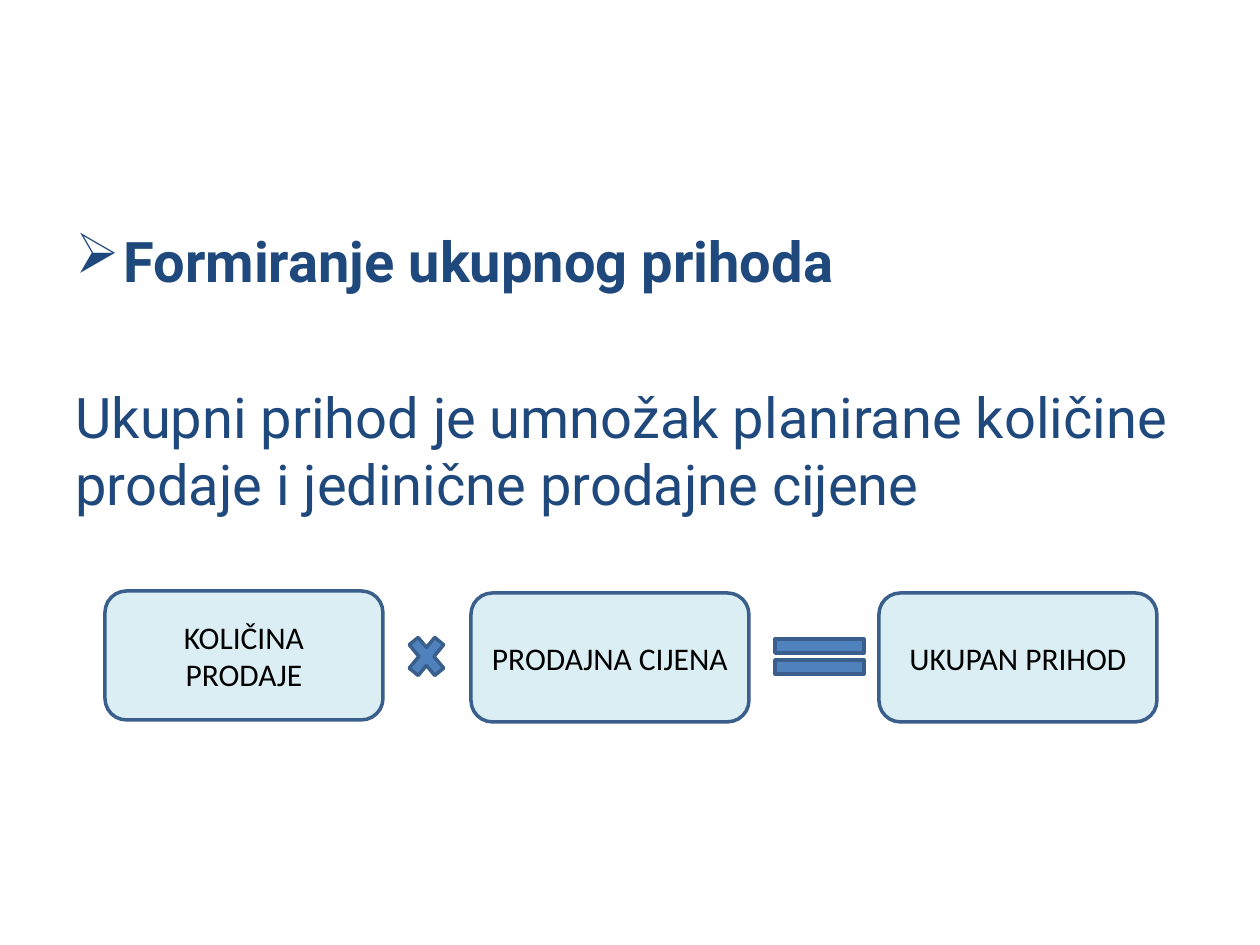
from dataclasses import dataclass

from lxml import etree
from pptx import Presentation
from pptx.dml.color import RGBColor
from pptx.enum import shapes, text
from pptx.oxml.ns import qn
from pptx.util import Pt

PX = 914400 // 126  # EMU per pixel


@dataclass(frozen=True)
class Theme:
    navy: RGBColor = RGBColor(0x1F, 0x49, 0x7D)
    black: RGBColor = RGBColor(0, 0, 0)
    pale: RGBColor = RGBColor(0xDB, 0xEE, 0xF4)
    blue: RGBColor = RGBColor(0x4F, 0x81, 0xBD)
    outline: RGBColor = RGBColor(0x3A, 0x5F, 0x8C)
    body_font: str = "Roboto"
    label_font: str = "Calibri"
    body_size: Pt = Pt(32)
    label_size: Pt = Pt(18)
    line_width: Pt = Pt(2)


THEME = Theme()


def emu(*lengths):
    return [length * PX for length in lengths]


def set_font(paragraph, name, size, color, bold=False):
    font = paragraph.font
    font.name, font.size, font.bold = name, size, bold
    font.color.rgb = color


def add_arrow_bullet(paragraph, indent):
    properties = paragraph._p.get_or_add_pPr()
    properties.set("marL", str(indent * PX))
    properties.set("indent", str(-indent * PX))
    etree.SubElement(properties, qn("a:buChar")).set("char", "➢")


def add_definition(slide, left, top, width, height):
    """Bulleted heading with the definition below it."""
    frame = slide.shapes.add_textbox(*emu(left, top, width, height)).text_frame
    frame.word_wrap = True

    heading = frame.paragraphs[0]
    heading.text = "Formiranje ukupnog prihoda"
    add_arrow_bullet(heading, indent=48)

    definition = frame.add_paragraph()
    definition.text = ("Ukupni prihod je umnožak planirane količine "
                       "prodaje i jedinične prodajne cijene")
    definition.space_before = Pt(51)

    for paragraph, bold in ((heading, True), (definition, False)):
        set_font(paragraph, THEME.body_font, THEME.body_size, THEME.navy, bold)


def add_outlined(slide, kind, box, fill):
    shape = slide.shapes.add_shape(kind, *emu(*box))
    shape.shadow.inherit = False
    shape.fill.solid()
    shape.fill.fore_color.rgb = fill
    shape.line.color.rgb = THEME.outline
    shape.line.width = THEME.line_width
    return shape


def add_equation(slide, left, top):
    """Quantity times price equals revenue."""
    # Factors and result: label, x, y
    terms = (("KOLIČINA PRODAJE", 0, 0),
             ("PRODAJNA CIJENA", 366, 2),
             ("UKUPAN PRIHOD", 774, 2))
    for label, x, y in terms:
        term = add_outlined(slide, shapes.MSO_SHAPE.ROUNDED_RECTANGLE,
                            (left + x, top + y, 278, 129), THEME.pale)
        frame = term.text_frame
        frame.word_wrap = True
        frame.vertical_anchor = text.MSO_ANCHOR.MIDDLE
        paragraph = frame.paragraphs[0]
        paragraph.text = label
        paragraph.alignment = text.PP_ALIGN.CENTER
        set_font(paragraph, THEME.label_font, THEME.label_size, THEME.black)

    # Operators: shape, x, width
    operators = ((shapes.MSO_SHAPE.MATH_MULTIPLY, 297, 49),
                 (shapes.MSO_SHAPE.MATH_EQUAL, 654, 121))
    for kind, x, width in operators:
        add_outlined(slide, kind, (left + x, top + 36, width, 59), THEME.blue)


def main():
    deck = Presentation()
    deck.slide_width, deck.slide_height = emu(1260, 945)
    slide = deck.slides.add_slide(deck.slide_layouts[6])
    add_definition(slide, 63, 220, 1134, 624)
    add_equation(slide, 105, 591)
    deck.save("out.pptx")


if __name__ == "__main__":
    main()
